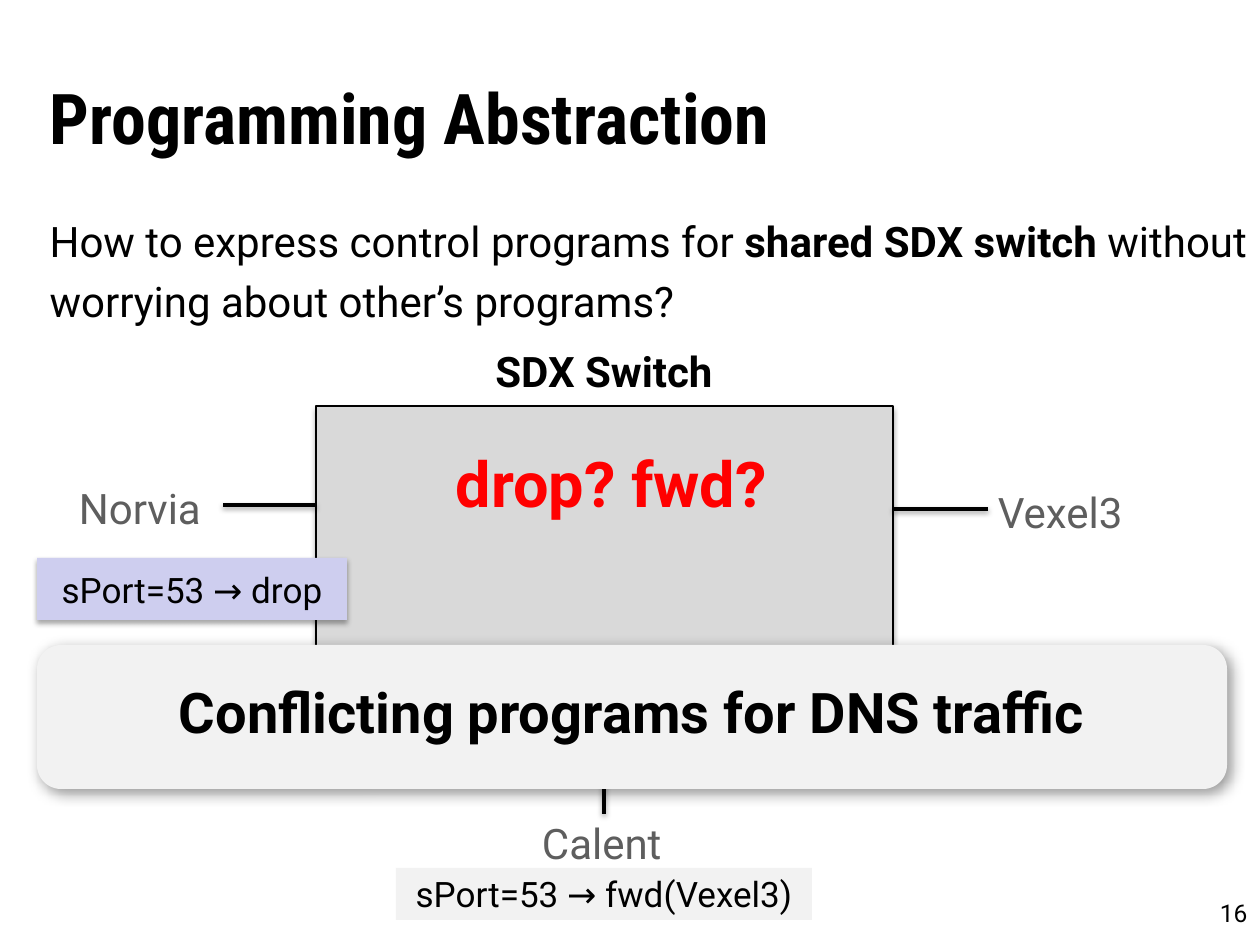
from lxml import etree
from pptx import Presentation
from pptx import util as u
from pptx.dml.color import RGBColor
from pptx.enum import shapes, text
from pptx.oxml.ns import qn

SCALE = 914400 / 126
BLACK = RGBColor(0x00, 0x00, 0x00)
RED = RGBColor(0xFF, 0x00, 0x00)
GREY = RGBColor(0x5E, 0x5E, 0x5E)
SWITCH_FILL = RGBColor(0xD9, 0xD9, 0xD9)
PALE = RGBColor(0xF2, 0xF2, 0xF2)
LILAC = RGBColor(0xCE, 0xCE, 0xEF)

LEFT, CENTER, RIGHT = text.PP_ALIGN.LEFT, text.PP_ALIGN.CENTER, text.PP_ALIGN.RIGHT
TOP, MIDDLE = text.MSO_ANCHOR.TOP, text.MSO_ANCHOR.MIDDLE
RECT = shapes.MSO_SHAPE.RECTANGLE
ROUNDED = shapes.MSO_SHAPE.ROUNDED_RECTANGLE

BOX_SHADOW = {"blur": 3.1, "dist": 1.8, "angle": 90, "alpha": 35}
LINK_SHADOW = {"blur": 3.1, "dist": 1.6, "angle": 90, "alpha": 38}
BANNER_SHADOW = {"blur": 8, "dist": 3, "angle": 45, "alpha": 40}

TITLE = ((37, 38, 1263, 157), "Programming Abstraction")
QUESTION = ((37, 199, 1235, 129), [
    ("How to express control programs for ", False),
    ("shared SDX switch ", True),
    ("without worrying about other’s programs?", False),
])
SWITCH = (316, 406, 577, 345)
LINKS = [(316, 505, 223, 505), (988, 509, 893, 509), (604, 751, 604, 814)]
PEERS = [
    ((79, 479, 137, 52), "Norvia"),
    ((542, 814, 139, 52), "Calent"),
    ((998, 483, 123, 52), "Vexel3"),
]
LABELS = [
    ((966, 892, 294, 32), "16", {"size": 14, "align": RIGHT}),
    ((473, 339, 262, 63), "SDX Switch",
     {"size": 24, "bold": True, "align": CENTER, "wrap": False}),
    ((359, 442, 505, 81), "drop? fwd?",
     {"size": 36, "bold": True, "align": CENTER, "color": RED, "anchor": MIDDLE}),
]
PANELS = [
    (ROUNDED, (37, 645, 1190, 144), PALE, BANNER_SHADOW,
     "Conflicting programs for DNS traffic", {"size": 32, "bold": True, "spacing": 0.8}),
    (RECT, (396, 868, 416, 52), PALE, None, "sPort=53 → fwd(Vexel3)", {"size": 20}),
    (RECT, (37, 558, 310, 62), LILAC, BOX_SHADOW, "sPort=53 → drop", {"size": 20}),
]


def px(*lengths):
    return [u.Emu(round(length * SCALE)) for length in lengths]


def place(shape, box):
    for name, value in zip(("left", "top", "width", "height"), px(*box)):
        setattr(shape, name, value)


def write(shape, runs, size, font="Roboto", color=BLACK, bold=False, align=LEFT,
          anchor=TOP, wrap=True, spacing=1.0, inset=None):
    frame = shape.text_frame
    frame_format = {"auto_size": text.MSO_AUTO_SIZE.NONE, "word_wrap": wrap,
                    "vertical_anchor": anchor}
    if inset is not None:
        frame_format.update({f"margin_{side}": inset
                             for side in ("left", "top", "right", "bottom")})
    para = frame.paragraphs[0]
    para_format = {"alignment": align, "line_spacing": spacing, "space_before": u.Pt(0)}
    for target, values in ((frame, frame_format), (para, para_format)):
        for name, value in values.items():
            setattr(target, name, value)
    for words, strong in ([(runs, bold)] if isinstance(runs, str) else runs):
        span = para.add_run()
        span.text = words
        span.font.color.rgb = color
        for name, value in {"name": font, "size": u.Pt(size), "bold": strong}.items():
            setattr(span.font, name, value)
    return para


def cast_shadow(shape, blur, dist, angle, alpha):
    properties = shape._element.spPr
    effects = properties.find(qn("a:effectLst"))
    if effects is None:
        effects = etree.SubElement(properties, qn("a:effectLst"))
    shadow = etree.SubElement(effects, qn("a:outerShdw"), {
        "blurRad": str(u.Pt(blur)), "dist": str(u.Pt(dist)),
        "dir": str(angle * 60000), "algn": "tl", "rotWithShape": "0"})
    tint = etree.SubElement(shadow, qn("a:srgbClr"), val=str(BLACK))
    etree.SubElement(tint, qn("a:alpha"), val=str(alpha * 1000))


def add_panel(page, kind, box, fill, shadow):
    panel = page.shapes.add_shape(kind, *px(*box))
    panel.fill.solid()
    panel.fill.fore_color.rgb = fill
    panel.line.fill.background()
    panel.shadow.inherit = False
    if shadow:
        cast_shadow(panel, **shadow)
    return panel


def add_label(page, box, words, style):
    write(page.shapes.add_textbox(*px(*box)), words, **style)


def main():
    deck = Presentation()
    deck.slide_width, deck.slide_height = px(1260, 945)
    page = deck.slides.add_slide(deck.slide_layouts[1])

    title, body = page.shapes.title, page.placeholders[1]
    place(title, TITLE[0])
    write(title, TITLE[1], 40, font="Roboto Condensed", bold=True, anchor=MIDDLE)
    place(body, QUESTION[0])
    para = write(body, QUESTION[1], 24, spacing=1.2)
    properties = para._p.get_or_add_pPr()
    properties.set("marL", "0")
    properties.set("indent", "0")
    etree.SubElement(properties, qn("a:buNone"))

    switch = add_panel(page, RECT, SWITCH, SWITCH_FILL, BOX_SHADOW)
    switch.line.color.rgb = BLACK
    switch.line.width = u.Pt(0.75)

    for ends in LINKS:
        link = page.shapes.add_connector(shapes.MSO_CONNECTOR.STRAIGHT, *px(*ends))
        link.line.color.rgb = BLACK
        link.line.width = u.Pt(2)
        cast_shadow(link, **LINK_SHADOW)

    peer_style = {"size": 24, "color": GREY, "anchor": MIDDLE, "wrap": False,
                  "spacing": 1.1, "inset": 0}
    for box, name in PEERS:
        add_label(page, box, name, peer_style)
    for label in LABELS:
        add_label(page, *label)

    for kind, box, fill, shadow, words, style in PANELS:
        panel = add_panel(page, kind, box, fill, shadow)
        write(panel, words, align=CENTER, anchor=MIDDLE, **style)

    deck.save("out.pptx")


if __name__ == "__main__":
    main()
